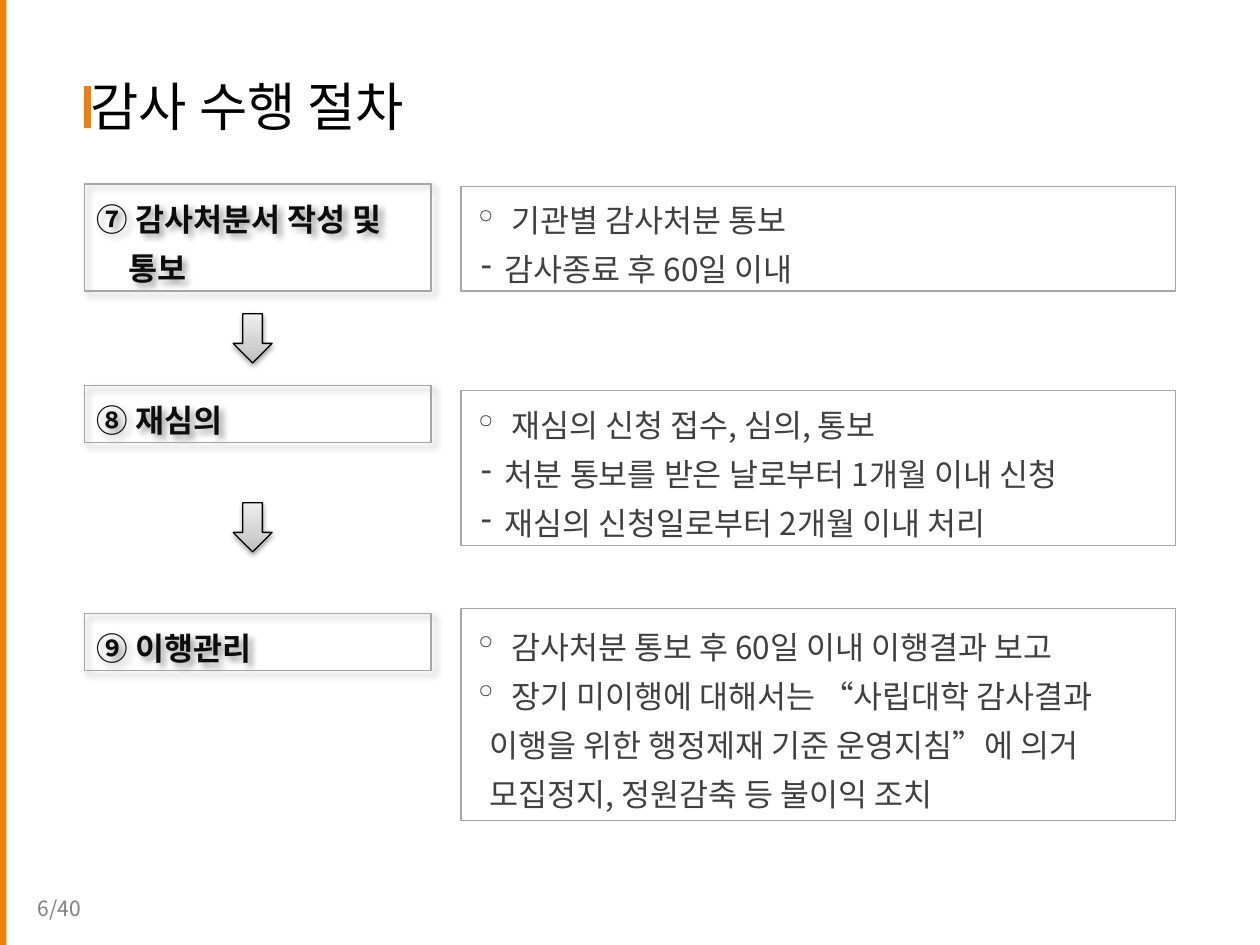
"""Build the audit procedure slide: three numbered steps, their details and two arrows."""
import copy

import lxml.etree
import pptx
import pptx.dml.color
import pptx.enum.shapes
import pptx.enum.text
import pptx.oxml
import pptx.oxml.ns
import pptx.util

Inches = pptx.util.Inches
Pt = pptx.util.Pt
RGBColor = pptx.dml.color.RGBColor
SHAPES = pptx.enum.shapes.MSO_SHAPE
qn = pptx.oxml.ns.qn

FONT = "Noto Sans CJK KR"
COLORS = {"accent": "F07F09", "border": "A6A6A6", "step": "0D0D0D", "detail": "404040",
          "title": "000000", "page": "808080", "arrow": "000000"}
ARROW_STOPS = [(0, "BDBDBD"), (0.35, "D1D1D1"), (1, "EEEEEE")]
LEVELS = {"plain": (0, 0, None), "step_wrap": (0.25, 0, None), "wrap": (0.13, 0, None),
          "circle": (0.3, -0.3, "◦"), "dash": (0.25, -0.19, "-")}


def write_lines(text_frame, lines, size, color, bold=False, spacing=1.0):
    """Fill a text frame with (level, text) lines in one style."""
    text_frame.word_wrap = True
    text_frame.vertical_anchor = pptx.enum.text.MSO_ANCHOR.MIDDLE
    text_frame.text = "\n".join(text for level, text in lines)
    for paragraph, (level, text) in zip(text_frame.paragraphs, lines):
        margin, indent, bullet = LEVELS[level]
        properties = paragraph._p.get_or_add_pPr()
        properties.set("marL", str(Inches(margin)))
        properties.set("indent", str(Inches(indent)))
        if bullet:
            lxml.etree.SubElement(properties, qn("a:buChar")).set("char", bullet)
        paragraph.alignment = pptx.enum.text.PP_ALIGN.LEFT
        paragraph.line_spacing = spacing
        for run in paragraph.runs:
            run.font.size = Pt(size)
            run.font.bold = bold
            run.font.color.rgb = RGBColor.from_string(COLORS[color])
            run.font.name = FONT
            lxml.etree.SubElement(run._r.get_or_add_rPr(), qn("a:ea")).set("typeface", FONT)


def add_shadow(shape, alpha, blur, distance, angle):
    """Give a shape a black outer shadow."""
    effects = shape._element.spPr.find(qn("a:effectLst"))
    effects.append(pptx.oxml.parse_xml(
        f'<a:outerShdw xmlns:a="http://schemas.openxmlformats.org/drawingml/2006/main" '
        f'blurRad="{Pt(blur)}" dist="{Pt(distance)}" dir="{angle * 60000}" rotWithShape="0">'
        f'<a:srgbClr val="000000"><a:alpha val="{alpha * 1000}"/></a:srgbClr></a:outerShdw>'))


presentation = pptx.Presentation()
presentation.slide_width = Inches(10)
presentation.slide_height = Inches(7.5)
slide = presentation.slides.add_slide(presentation.slide_layouts[5])

title = slide.shapes.title
title.left, title.top, title.width, title.height = (
    Inches(0.43), Inches(0.44), Inches(5.12), Inches(0.79))
write_lines(title.text_frame, [("plain", "감사 수행 절차")], 30, "title")
title.text_frame.margin_left = Inches(0.29)
title.text_frame.auto_size = pptx.enum.text.MSO_AUTO_SIZE.NONE

for kind, left, top, height in [(SHAPES.RECTANGLE, 0, 0, 7.5),
                                (SHAPES.FLOWCHART_PROCESS, 0.67, 0.68, 0.34)]:
    bar = slide.shapes.add_shape(kind, Inches(left), Inches(top), Inches(0.05), Inches(height))
    bar.shadow.inherit = False
    bar.fill.solid()
    bar.fill.fore_color.rgb = RGBColor.from_string(COLORS["accent"])
    bar.line.fill.background()

step_boxes = [
    (1.46, 0.85, [("plain", "⑦ 감사처분서 작성 및"), ("step_wrap", "통보")]),
    (3.06, 0.45, [("plain", "⑧ 재심의")]),
    (4.87, 0.45, [("plain", "⑨ 이행관리")]),
]
detail_boxes = [
    (1.48, 0.83, [("circle", "기관별 감사처분 통보"), ("dash", "감사종료 후 60일 이내")]),
    (3.1, 1.23, [("circle", "재심의 신청 접수, 심의, 통보"),
                 ("dash", "처분 통보를 받은 날로부터 1개월 이내 신청"),
                 ("dash", "재심의 신청일로부터 2개월 이내 처리")]),
    (4.83, 1.68, [("circle", "감사처분 통보 후 60일 이내 이행결과 보고"),
                  ("circle", "장기 미이행에 대해서는 “사립대학 감사결과"),
                  ("wrap", "이행을 위한 행정제재 기준 운영지침”에 의거"),
                  ("wrap", "모집정지, 정원감축 등 불이익 조치")]),
]
for color, left, width, boxes in [("step", 0.67, 2.75, step_boxes),
                                  ("detail", 3.66, 5.67, detail_boxes)]:
    for top, height, lines in boxes:
        box = slide.shapes.add_shape(
            SHAPES.RECTANGLE, Inches(left), Inches(top), Inches(width), Inches(height))
        box.shadow.inherit = False
        box.fill.background()
        box.line.color.rgb = RGBColor.from_string(COLORS["border"])
        box.line.width = Pt(0.75)
        write_lines(box.text_frame, lines, 18, color, bold=color == "step", spacing=1.3)
        box.text_frame.auto_size = pptx.enum.text.MSO_AUTO_SIZE.SHAPE_TO_FIT_TEXT
        if color == "step":
            add_shadow(box, 40, 4, 3, 45)

for top in (2.49, 3.99):
    arrow = slide.shapes.add_shape(
        SHAPES.DOWN_ARROW, Inches(1.85), Inches(top), Inches(0.31), Inches(0.39))
    arrow.shadow.inherit = False
    arrow.fill.gradient()
    arrow.fill.gradient_angle = 90
    stop_list = arrow._element.spPr.find(qn("a:gradFill")).find(qn("a:gsLst"))
    stop_list.append(copy.deepcopy(stop_list[0]))
    for stop, (position, color) in zip(arrow.fill.gradient_stops, ARROW_STOPS):
        stop.position = position
        stop.color.rgb = RGBColor.from_string(color)
    arrow.line.color.rgb = RGBColor.from_string(COLORS["arrow"])
    arrow.line.width = Pt(0.75)
    add_shadow(arrow, 38, 3.1, 1.6, 90)

page_number = slide.shapes.add_textbox(Inches(0.2), Inches(7.06), Inches(0.55), Inches(0.3))
write_lines(page_number.text_frame, [("plain", "6/40")], 12, "page")

presentation.save("out.pptx")
